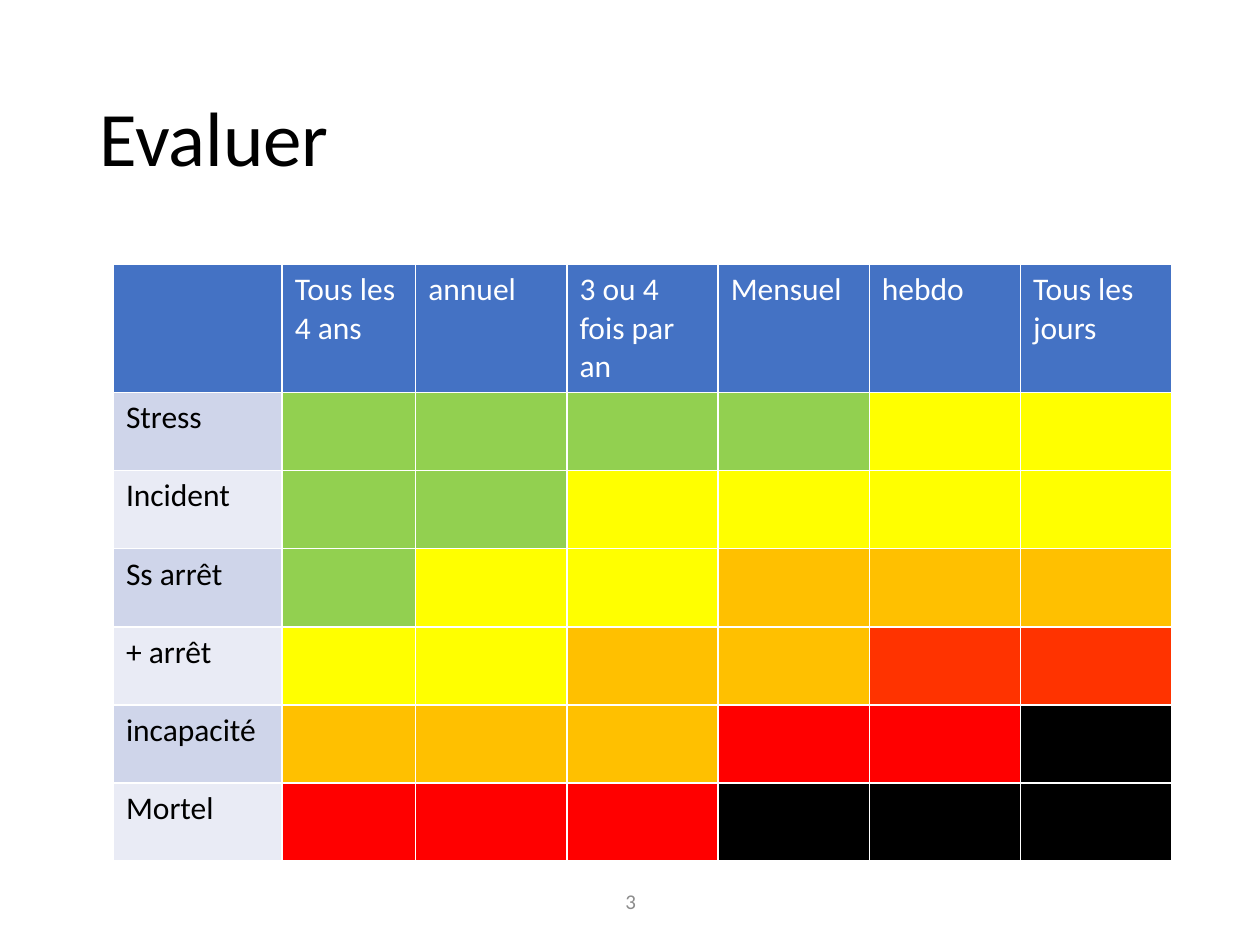
from dataclasses import dataclass

from pptx import Presentation
from pptx.dml.color import RGBColor
from pptx.enum.text import MSO_ANCHOR, PP_ALIGN
from pptx.util import Inches, Pt

MIDDLE = MSO_ANCHOR.MIDDLE
LEFT, CENTER = PP_ALIGN.LEFT, PP_ALIGN.CENTER
FONT = "Calibri"
BLACK, WHITE, GREY = "000000", "FFFFFF", "8C8C8C"
HEADER_FILL = "4472C4"
BAND_FILLS = ("CFD5EA", "E9EBF5")
RISK_FILLS = {
    "G": "92D050",
    "Y": "FFFF00",
    "O": "FFC000",
    "V": "FF3300",
    "R": "FF0000",
    "B": BLACK,
}
FREQUENCIES = ("", "Tous les 4 ans", "annuel", "3 ou 4 fois par an", "Mensuel", "hebdo", "Tous les jours")
COLUMN_WIDTHS = (1.34, 1.06) + (1.2,) * 5
HEADER_HEIGHT, ROW_HEIGHT = 1.0, 0.62


@dataclass(frozen=True)
class Severity:
    label: str
    risks: str


@dataclass(frozen=True)
class Caption:
    text: str
    left: float
    top: float
    width: float
    height: float
    size: float
    color: str
    align: PP_ALIGN
    line_spacing: float


SEVERITIES = (
    Severity("Stress", "GGGGYY"),
    Severity("Incident", "GGYYYY"),
    Severity("Ss arrêt", "GYYOOO"),
    Severity("+ arrêt", "YYOOVV"),
    Severity("incapacité", "OOORRB"),
    Severity("Mortel", "RRRBBB"),
)
CAPTIONS = (
    Caption("Evaluer", 0.69, 0.4, 8.62, 1.45, 44, BLACK, LEFT, 0.9),
    Caption("3", 3.42, 6.95, 3.17, 0.4, 12, GREY, CENTER, 1.0),
)


def rgb(value: str) -> RGBColor:
    """Turn a hex string into a colour."""
    return RGBColor.from_string(value)


def style_font(font, size: float, color: str) -> None:
    """Set the typeface, size, weight and colour of a font."""
    font.name = FONT
    font.size = Pt(size)
    font.bold = False
    font.color.rgb = rgb(color)


def add_caption(slide, caption: Caption) -> None:
    """Place one line of text, centred vertically in its box."""
    box = slide.shapes.add_textbox(
        Inches(caption.left), Inches(caption.top), Inches(caption.width), Inches(caption.height)
    )
    frame = box.text_frame
    frame.word_wrap = True
    frame.vertical_anchor = MIDDLE
    frame.text = caption.text
    paragraph = frame.paragraphs[0]
    paragraph.alignment = caption.align
    paragraph.line_spacing = caption.line_spacing
    style_font(paragraph.runs[0].font, caption.size, caption.color)


def fill_cell(cell, fill: str, text: str = "", color: str = BLACK) -> None:
    """Colour a cell and write its label, if it has one."""
    cell.fill.solid()
    cell.fill.fore_color.rgb = rgb(fill)
    if text:
        cell.text = text
        style_font(cell.text_frame.paragraphs[0].runs[0].font, 18, color)


def add_risk_matrix(slide) -> None:
    """Draw the table that crosses severity with frequency."""
    height = HEADER_HEIGHT + ROW_HEIGHT * len(SEVERITIES)
    matrix = slide.shapes.add_table(
        len(SEVERITIES) + 1,
        len(FREQUENCIES),
        Inches(0.9),
        Inches(2.1),
        Inches(sum(COLUMN_WIDTHS)),
        Inches(height),
    ).table
    for column, width in zip(matrix.columns, COLUMN_WIDTHS):
        column.width = Inches(width)
    for index, row in enumerate(matrix.rows):
        row.height = Inches(ROW_HEIGHT if index else HEADER_HEIGHT)
    for column, frequency in enumerate(FREQUENCIES):
        fill_cell(matrix.cell(0, column), HEADER_FILL, frequency, WHITE)
    for index, severity in enumerate(SEVERITIES):
        fill_cell(matrix.cell(index + 1, 0), BAND_FILLS[index % 2], severity.label)
        for column, risk in enumerate(severity.risks, start=1):
            fill_cell(matrix.cell(index + 1, column), RISK_FILLS[risk])


def main() -> None:
    """Build the slide and save it."""
    presentation = Presentation()
    presentation.slide_width = Inches(10)
    presentation.slide_height = Inches(7.5)
    slide = presentation.slides.add_slide(presentation.slide_layouts[6])
    add_risk_matrix(slide)
    for caption in CAPTIONS:
        add_caption(slide, caption)
    presentation.save("out.pptx")


if __name__ == "__main__":
    main()
